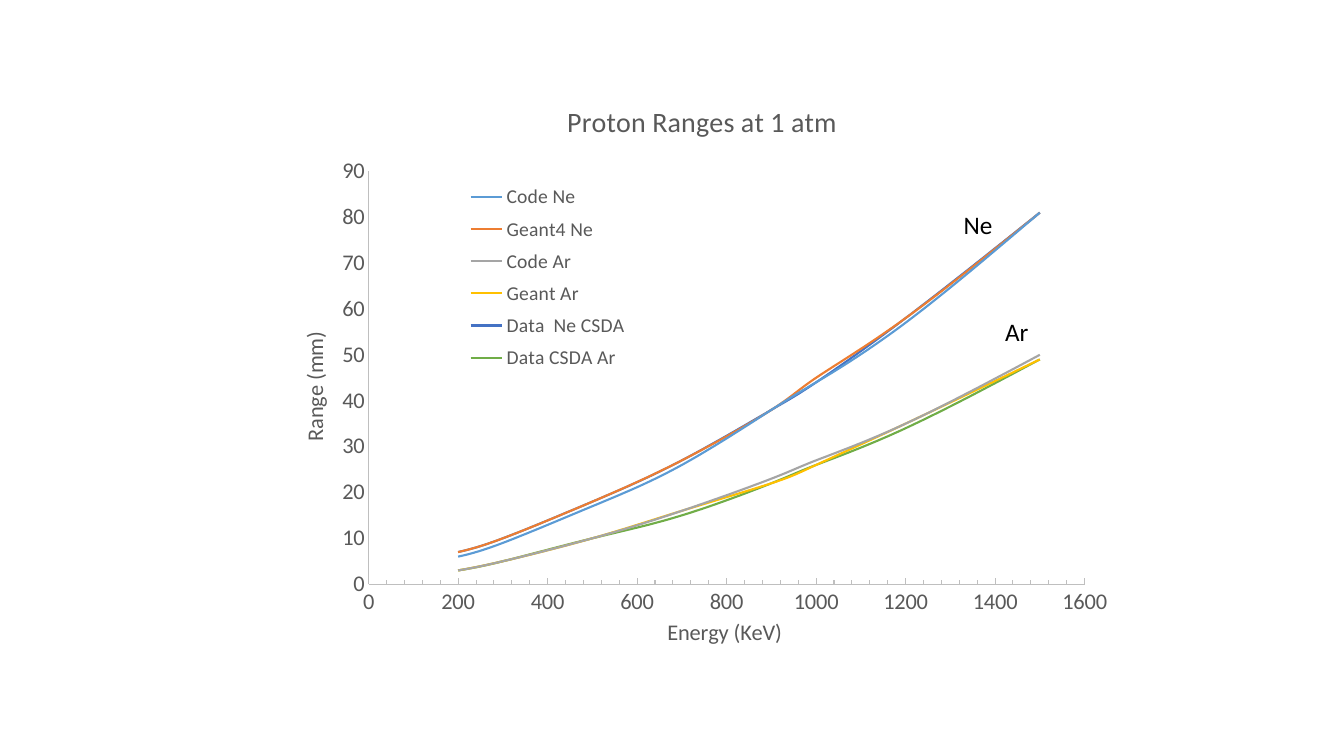
import pptx
import pptx.chart.data
import pptx.dml.color
import pptx.enum.chart
import pptx.enum.text
import pptx.oxml
import pptx.oxml.ns
import pptx.util

Inches = pptx.util.Inches
qn = pptx.oxml.ns.qn
FONT = "Calibri"
GREY = "595959"
AXIS_GREY = "BFBFBF"

ENERGIES = [200, 300, 500, 700, 900, 1000, 1200, 1500]
RANGES = [
    ("Code Ne", "5B9BD5", [6, 9, 17, 26, 38, 44, 57, 81]),
    ("Geant4 Ne", "ED7D31", [7, 10, 18, 27, 38, 45, 58, 81]),
    ("Code Ar", "A5A5A5", [3, 5, 10, 16, 23, 27, 35, 50]),
    ("Geant Ar", "FFC000", [3, 5, 10, 16, 22, 26, 35, 49]),
    ("Data  Ne CSDA", "4472C4", [7, 10, 18, 27, 38, 44, 58, 81]),
    ("Data CSDA Ar", "70AD47", [3, 5, 10, 15, 22, 26, 34, 49]),
]


def color(hex_string):
    return pptx.dml.color.RGBColor.from_string(hex_string)


def format_font(font, size, hex_string):
    font.name = FONT
    font.size = pptx.util.Pt(size)
    font.bold = False
    font.color.rgb = color(hex_string)


def write_text(frame, text, size=18, hex_string="000000"):
    span = frame.paragraphs[0].add_run()
    span.text = text
    format_font(span.font, size, hex_string)


def format_line(line, hex_string, width):
    line.color.rgb = color(hex_string)
    line.width = pptx.util.Pt(width)


def set_layout(parent, index, left, top, width, height, inner=False):
    """Place a chart part by fractions of the chart area."""
    for layout in parent.findall(qn("c:layout")):
        parent.remove(layout)
    target = '<c:layoutTarget val="inner"/>' if inner else ""
    parent.insert(index, pptx.oxml.parse_xml(
        f'<c:layout {pptx.oxml.ns.nsdecls("c")}><c:manualLayout>{target}'
        '<c:xMode val="edge"/><c:yMode val="edge"/>'
        f'<c:x val="{left}"/><c:y val="{top}"/>'
        f'<c:w val="{width}"/><c:h val="{height}"/>'
        "</c:manualLayout></c:layout>"
    ))


def format_axis(axis, title, maximum, step, tick):
    axis.minimum_scale = 0
    axis.maximum_scale = maximum
    axis.major_unit = step
    axis.has_major_gridlines = False
    axis.major_tick_mark = axis.minor_tick_mark = tick
    format_line(axis.format.line, AXIS_GREY, 0.75)
    format_font(axis.tick_labels.font, 16, GREY)
    axis.tick_labels.number_format = "General"
    axis.tick_labels.number_format_is_linked = False
    write_text(axis.axis_title.text_frame, title, size=16, hex_string=GREY)


def format_legend(chart):
    chart.has_legend = True
    legend = chart.legend
    legend.position = pptx.enum.chart.XL_LEGEND_POSITION.RIGHT
    legend.include_in_layout = True
    format_font(legend.font, 14, GREY)
    position = legend._element.find(qn("c:legendPos"))
    index = legend._element.index(position) + 1
    set_layout(legend._element, index, 0.2, 0.17, 0.22, 0.35)


def format_curves(plot):
    plot.vary_by_categories = False
    for series, (_, line_color, _) in zip(plot.series, RANGES):
        format_line(series.format.line, line_color, 1.5)
        series._element.get_or_add_smooth().val = True


def add_range_chart(page, left, top, width, height):
    data = pptx.chart.data.XyChartData()
    for name, _, ranges in RANGES:
        series = data.add_series(name)
        for energy, distance in zip(ENERGIES, ranges):
            series.add_data_point(energy, distance)
    chart = page.shapes.add_chart(
        pptx.enum.chart.XL_CHART_TYPE.XY_SCATTER_SMOOTH_NO_MARKERS,
        Inches(left), Inches(top), Inches(width), Inches(height), data,
    ).chart
    format_font(chart.font, 10, "000000")
    chart.has_title = True
    write_text(chart.chart_title.text_frame, "Proton Ranges at 1 atm",
               size=20, hex_string=GREY)
    format_curves(chart.plots[0])

    ticks = pptx.enum.chart.XL_TICK_MARK
    format_axis(chart.category_axis, "Energy (KeV)", 1600, 200, ticks.INSIDE)
    chart.category_axis.minor_unit = 40
    format_axis(chart.value_axis, "Range (mm)", 90, 10, ticks.NONE)
    format_legend(chart)
    set_layout(chart._chartSpace.chart.plotArea, 0,
               0.09, 0.16, 0.88, 0.72, inner=True)


def add_curve_label(page, text, left, top, width, height=0.4):
    box = page.shapes.add_textbox(
        Inches(left), Inches(top), Inches(width), Inches(height))
    box.text_frame.word_wrap = False
    box.text_frame.auto_size = pptx.enum.text.MSO_AUTO_SIZE.SHAPE_TO_FIT_TEXT
    write_text(box.text_frame, text)


def main():
    deck = pptx.Presentation()
    deck.slide_width = Inches(13.33)
    deck.slide_height = Inches(7.5)
    page = deck.slides.add_slide(deck.slide_layouts[6])
    add_range_chart(page, 2.93, 0.79, 8.07, 5.69)
    add_curve_label(page, "Ne", 9.46, 2.03, 0.49)
    add_curve_label(page, "Ar", 9.87, 3.09, 0.44)
    deck.save("out.pptx")


if __name__ == "__main__":
    main()
